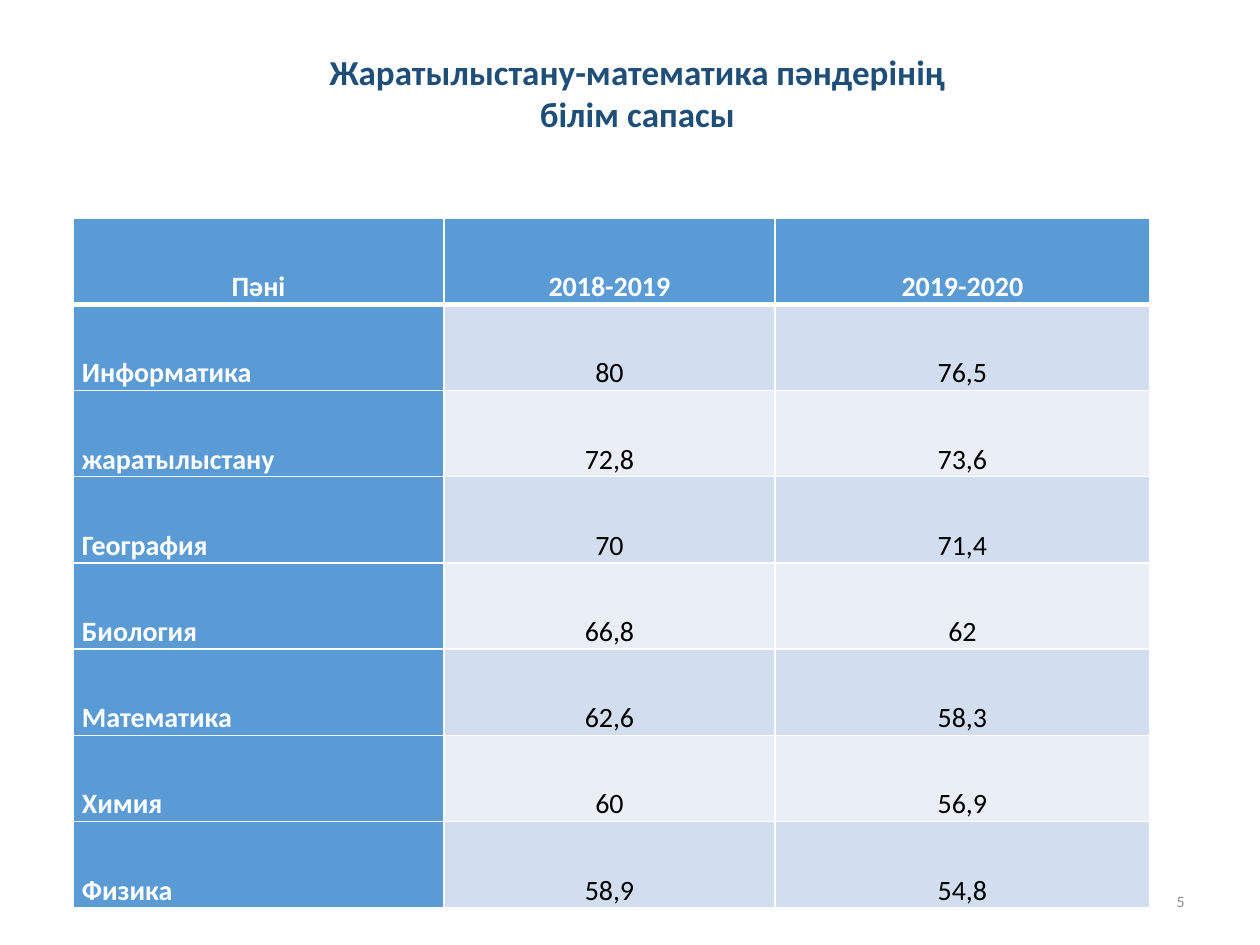
import pptx
import pptx.dml.color
import pptx.enum.text
import pptx.oxml
import pptx.oxml.ns
import pptx.util

PIXEL = 914400 / 126
FONT = "Calibri"
COLORS = {
    "title": "1F4E79",
    "accent": "5B9BD5",
    "band_dark": "D2DEEF",
    "band_light": "EAEFF7",
    "white": "FFFFFF",
    "black": "000000",
    "number": "8C8C8C",
}
ALIGN = pptx.enum.text.PP_ALIGN
ANCHOR = pptx.enum.text.MSO_ANCHOR

HEADER = ("Пәні", "2018-2019", "2019-2020")
RESULTS = (
    ("Информатика", "80", "76,5"),
    ("жаратылыстану", "72,8", "73,6"),
    ("География", "70", "71,4"),
    ("Биология", "66,8", "62"),
    ("Математика", "62,6", "58,3"),
    ("Химия", "60", "56,9"),
    ("Физика", "58,9", "54,8"),
)
COLUMN_WIDTHS = (371, 331, 375)


def px(length):
    return pptx.util.Emu(round(length * PIXEL))


def rgb(name):
    return pptx.dml.color.RGBColor.from_string(COLORS[name])


def write_text(frame, text, size, color, bold=False, align=ALIGN.CENTER, spacing=None):
    """Write one paragraph for each line of the text."""
    for index, line in enumerate(text.split("\n")):
        paragraph = frame.add_paragraph() if index else frame.paragraphs[0]
        paragraph.alignment = align
        paragraph.line_spacing = spacing
        run = paragraph.add_run()
        run.text = line
        run.font.name = FONT
        run.font.size = pptx.util.Pt(size)
        run.font.bold = bold
        run.font.color.rgb = rgb(color)


def add_text_box(slide, box, text, anchor=ANCHOR.TOP, **text_format):
    frame = slide.shapes.add_textbox(*map(px, box)).text_frame
    frame.word_wrap = True
    frame.vertical_anchor = anchor
    write_text(frame, text, **text_format)


def set_borders(cell, **widths):
    """Draw white cell borders; widths are points by side (L, R, T, B)."""
    properties = cell._tc.get_or_add_tcPr()
    for side, width in widths.items():
        properties.append(pptx.oxml.parse_xml(
            f'<a:ln{side} {pptx.oxml.ns.nsdecls("a")} w="{pptx.util.Pt(width)}">'
            f'<a:solidFill><a:srgbClr val="{COLORS["white"]}"/></a:solidFill>'
            f'</a:ln{side}>'
        ))


def format_cell(cell, text, row, column):
    is_header, is_label = row == 0, column == 0
    heading = is_header or is_label
    # Borders go before the fill; the rule under the header is thicker
    set_borders(cell, L=1, R=1, T=3 if row == 1 else 1, B=3 if is_header else 1)
    band = "band_dark" if row % 2 else "band_light"
    cell.fill.solid()
    cell.fill.fore_color.rgb = rgb("accent" if heading else band)
    cell.vertical_anchor = ANCHOR.BOTTOM
    cell.margin_left = cell.margin_right = px(9)
    cell.margin_top = cell.margin_bottom = 0
    write_text(
        cell.text_frame, text, size=16, bold=heading, spacing=1.15,
        color="white" if heading else "black",
        align=ALIGN.LEFT if is_label and not is_header else ALIGN.CENTER,
    )


def add_results_table(slide, box):
    rows = (HEADER, *RESULTS)
    table = slide.shapes.add_table(len(rows), len(HEADER), *map(px, box)).table
    for column, width in zip(table.columns, COLUMN_WIDTHS):
        column.width = px(width)
    for row_index, values in enumerate(rows):
        table.rows[row_index].height = px(box[3] / len(rows))
        for column_index, text in enumerate(values):
            format_cell(table.cell(row_index, column_index), text, row_index, column_index)


def main():
    presentation = pptx.Presentation()
    presentation.slide_width, presentation.slide_height = px(1260), px(945)
    slide = presentation.slides.add_slide(presentation.slide_layouts[6])

    # Slide number
    add_text_box(slide, (903, 876, 294, 50), "5", anchor=ANCHOR.MIDDLE,
                 size=9, color="number", align=ALIGN.RIGHT)
    # Title
    add_text_box(slide, (102, 44, 1071, 97),
                 "Жаратылыстану-математика пәндерінің\nбілім сапасы",
                 size=20, color="title", bold=True)
    # Results by subject and year
    add_results_table(slide, (73, 218, sum(COLUMN_WIDTHS), 690))

    presentation.save("out.pptx")


if __name__ == "__main__":
    main()
